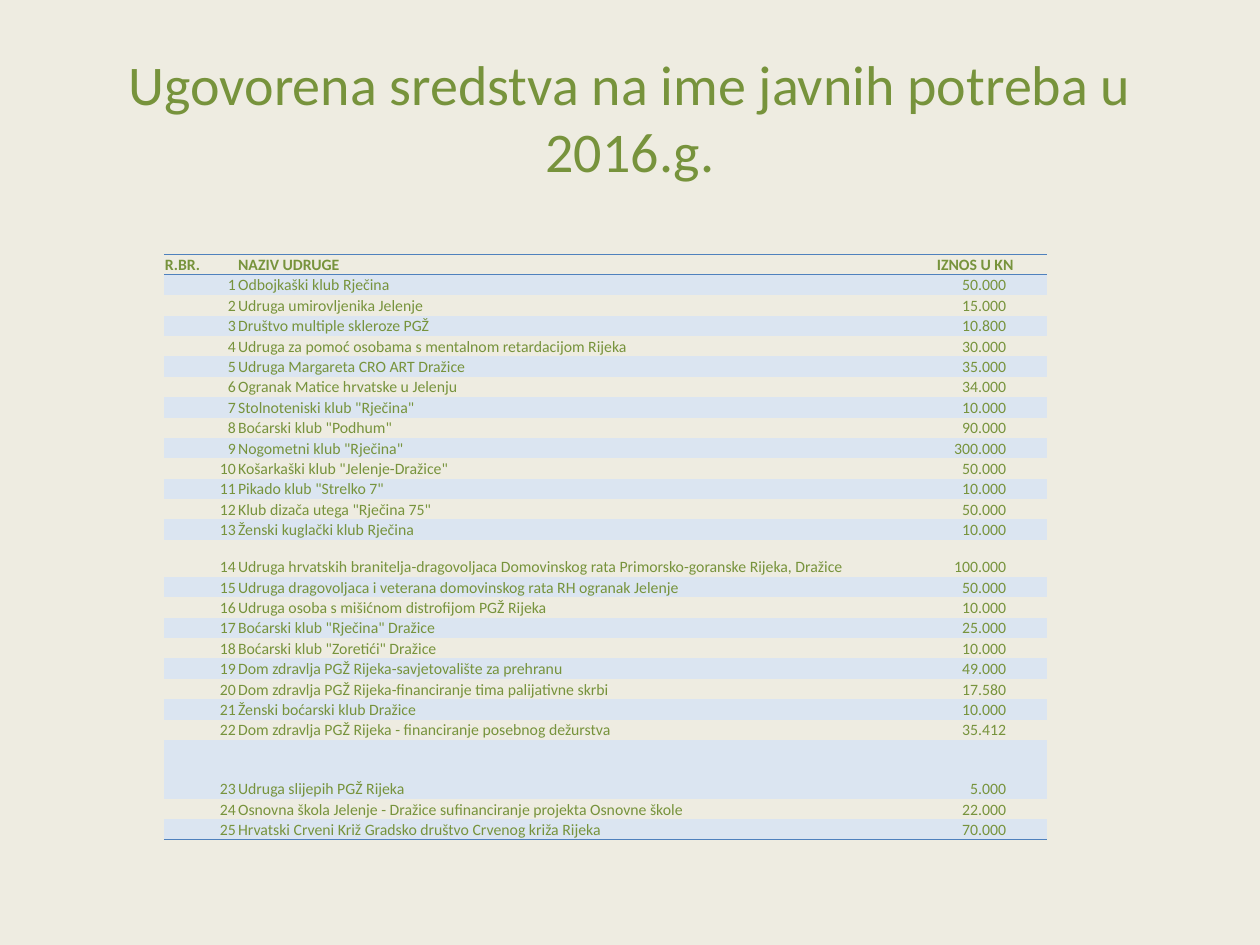
from lxml import etree
from pptx import Presentation
from pptx.dml.color import RGBColor
from pptx.enum.text import MSO_ANCHOR, PP_ALIGN
from pptx.oxml.ns import qn
from pptx.util import Pt

LEFT, CENTER, RIGHT = PP_ALIGN.LEFT, PP_ALIGN.CENTER, PP_ALIGN.RIGHT
MIDDLE, BOTTOM = MSO_ANCHOR.MIDDLE, MSO_ANCHOR.BOTTOM
PLAIN = "{2D5ABB26-0587-4C30-8999-92F81FD0307C}"
GREEN, CREAM, BAND, RULE = "77933C", "EEECE1", "DBE5F1", "4F81BD"
FONT = "Calibri"

TITLE = "Ugovorena sredstva na ime javnih potreba u 2016.g."
HEADS = ("R.BR.", "NAZIV UDRUGE", "IZNOS U KN")
CLUBS = [
    ("Odbojkaški klub Rječina", "50.000"),
    ("Udruga umirovljenika Jelenje", "15.000"),
    ("Društvo multiple skleroze PGŽ", "10.800"),
    ("Udruga za pomoć osobama s mentalnom retardacijom Rijeka", "30.000"),
    ("Udruga Margareta CRO ART Dražice", "35.000"),
    ("Ogranak Matice hrvatske u Jelenju", "34.000"),
    ('Stolnoteniski klub "Rječina"', "10.000"),
    ('Boćarski klub "Podhum"', "90.000"),
    ('Nogometni klub "Rječina"', "300.000"),
    ('Košarkaški klub "Jelenje-Dražice"', "50.000"),
    ('Pikado klub "Strelko 7"', "10.000"),
    ('Klub dizača utega "Rječina 75"', "50.000"),
    ("Ženski kuglački klub Rječina", "10.000"),
    ("Udruga hrvatskih branitelja-dragovoljaca Domovinskog rata "
     "Primorsko-goranske Rijeka, Dražice", "100.000"),
    ("Udruga dragovoljaca i veterana domovinskog rata RH ogranak Jelenje",
     "50.000"),
    ("Udruga osoba s mišićnom distrofijom PGŽ Rijeka", "10.000"),
    ('Boćarski klub "Rječina" Dražice', "25.000"),
    ('Boćarski klub "Zoretići" Dražice', "10.000"),
    ("Dom zdravlja PGŽ Rijeka-savjetovalište za prehranu", "49.000"),
    ("Dom zdravlja PGŽ Rijeka-financiranje tima palijativne skrbi", "17.580"),
    ("Ženski boćarski klub Dražice", "10.000"),
    ("Dom zdravlja PGŽ Rijeka - financiranje posebnog dežurstva", "35.412"),
    ("Udruga slijepih PGŽ Rijeka", "5.000"),
    ("Osnovna škola Jelenje - Dražice sufinanciranje projekta Osnovne škole",
     "22.000"),
    ("Hrvatski Crveni Križ Gradsko društvo Crvenog križa Rijeka", "70.000"),
]
WIDTHS = (41.8, 397.4, 65.5)
ROW = 11.66
TALL = {14: 21.2, 23: 33.7}
INSET = 0.7


def color(code):
    return RGBColor.from_string(code)


def paint(fill, code):
    fill.solid()
    fill.fore_color.rgb = color(code)


def apply(item, values):
    for name, value in values.items():
        setattr(item, name, value)


def write(frame, text, size, align, bold=False):
    frame.text = text
    para = frame.paragraphs[0]
    para.alignment = align
    font = para.runs[0].font
    apply(font, {"name": FONT, "size": Pt(size), "bold": bold})
    font.color.rgb = color(GREEN)


def rule(cell, side):
    line = etree.SubElement(cell._tc.get_or_add_tcPr(), qn("a:ln" + side),
                            w=str(Pt(0.5)))
    fill = etree.SubElement(line, qn("a:solidFill"))
    etree.SubElement(fill, qn("a:srgbClr"), val=RULE)


def add_title(slide, box):
    title = slide.shapes.title
    apply(title, dict(zip(("left", "top", "width", "height"), map(Pt, box))))
    apply(title.text_frame, {"word_wrap": True, "vertical_anchor": MIDDLE})
    write(title.text_frame, TITLE, 32, CENTER)


def add_grants(slide, left, top):
    rows = [HEADS] + [(str(num), *club) for num, club in enumerate(CLUBS, 1)]
    highs = [TALL.get(num, ROW) for num in range(len(rows))]
    frame = slide.shapes.add_table(len(rows), len(HEADS), Pt(left), Pt(top),
                                   Pt(sum(WIDTHS)), Pt(sum(highs)))
    table = frame.table
    table._tbl.tblPr.find(qn("a:tableStyleId")).text = PLAIN
    apply(table, {"first_row": False, "horz_banding": False})
    for col, width in zip(table.columns, WIDTHS):
        col.width = Pt(width)
    for num, (row, texts) in enumerate(zip(table.rows, rows)):
        row.height = Pt(highs[num])
        head = num == 0
        aligns = (LEFT,) * 3 if head else (RIGHT, LEFT, RIGHT)
        lefts = (INSET, INSET, 2.6 if head else INSET)
        rights = (INSET, INSET, INSET if head else 23.4)
        for col, cell in enumerate(row.cells):
            apply(cell, {
                "margin_left": Pt(lefts[col]),
                "margin_right": Pt(rights[col]),
                "margin_top": Pt(INSET),
                "margin_bottom": 0,
                "vertical_anchor": BOTTOM,
            })
            if head:
                rule(cell, "T")
            if num in (0, len(rows) - 1):
                rule(cell, "B")
            if num % 2:
                paint(cell.fill, BAND)
            else:
                cell.fill.background()
            write(cell.text_frame, texts[col], 9, aligns[col], head)


def main():
    deck = Presentation()
    apply(deck, {"slide_width": Pt(720), "slide_height": Pt(540)})
    slide = deck.slides.add_slide(deck.slide_layouts[5])
    paint(slide.background.fill, CREAM)
    add_title(slide, (36, 21.6, 648, 90))
    add_grants(slide, 93.6, 145.4)
    deck.save("out.pptx")


if __name__ == "__main__":
    main()
